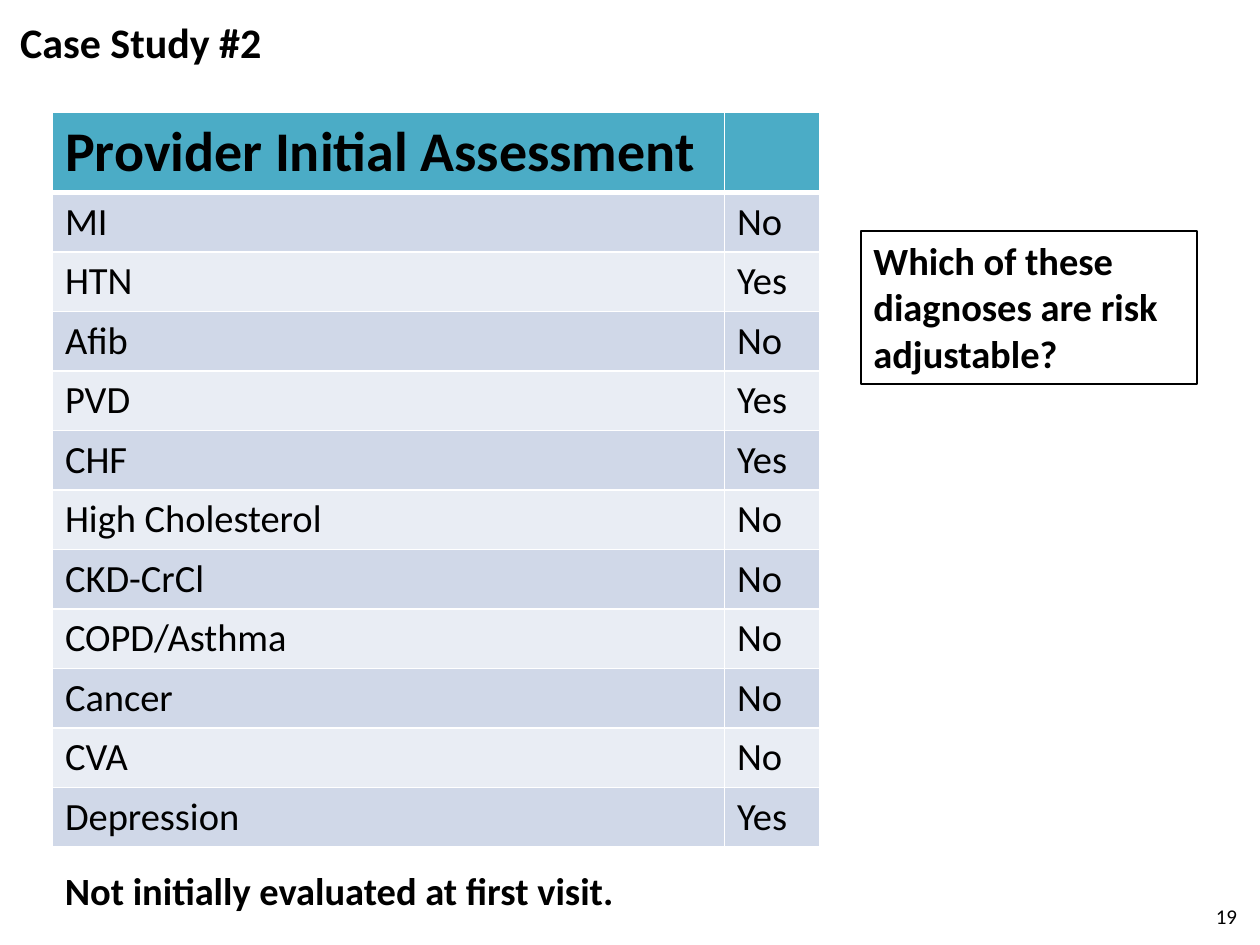
from lxml.etree import SubElement
from pptx import Presentation
from pptx.dml.color import RGBColor
from pptx.enum.shapes import MSO_SHAPE
from pptx.enum.text import MSO_ANCHOR, PP_ALIGN
from pptx.oxml.ns import qn
from pptx.util import Pt

FONT = "Calibri"
BLACK, WHITE, TEAL = "000000", "FFFFFF", "4BACC6"
BANDS = ["D0D8E8", "E9EDF4"]

TITLE = "Case Study #2"
HEADER = ("Provider Initial Assessment", "")
DIAGNOSES = [
    ("MI", "No"),
    ("HTN", "Yes"),
    ("Afib", "No"),
    ("PVD", "Yes"),
    ("CHF", "Yes"),
    ("High Cholesterol", "No"),
    ("CKD-CrCl", "No"),
    ("COPD/Asthma", "No"),
    ("Cancer", "No"),
    ("CVA", "No"),
    ("Depression", "Yes"),
]
NOTE = "Not initially evaluated at first visit."
QUESTION = "Which of these diagnoses are risk adjustable?"
PAGE = "19"

TABLE_LEFT, TABLE_TOP = 30, 64
COLUMNS = [384, 54.3]
HEADER_HEIGHT, ROW_HEIGHT = 46, 34


def rgb(value):
    return RGBColor.from_string(value)


def style(p, size, bold, align=PP_ALIGN.LEFT):
    p.alignment = align
    p.font.name = FONT
    p.font.size = Pt(size)
    p.font.bold = bold
    p.font.color.rgb = rgb(BLACK)


def write(sp, text, size, bold=True, anchor=MSO_ANCHOR.TOP, align=PP_ALIGN.LEFT):
    tf = sp.text_frame
    tf.word_wrap = True
    tf.vertical_anchor = anchor
    tf.text = text
    style(tf.paragraphs[0], size, bold, align)
    return tf


def add_border(cell, side, width):
    tcPr = cell._tc.get_or_add_tcPr()
    ln = SubElement(tcPr, qn(f"a:ln{side}"), w=str(Pt(width)))
    fill = SubElement(ln, qn("a:solidFill"))
    SubElement(fill, qn("a:srgbClr"), val=WHITE)


def add_assessment(s):
    rows = [HEADER] + DIAGNOSES
    heights = [HEADER_HEIGHT] + [ROW_HEIGHT] * len(DIAGNOSES)
    frame = s.shapes.add_table(
        len(rows), len(COLUMNS), Pt(TABLE_LEFT), Pt(TABLE_TOP),
        Pt(sum(COLUMNS)), Pt(sum(heights)))
    table = frame.table
    for column, width in zip(table.columns, COLUMNS):
        column.width = Pt(width)
    for i, (values, height) in enumerate(zip(rows, heights)):
        table.rows[i].height = Pt(height)
        for j, value in enumerate(values):
            cell = table.cell(i, j)
            cell.text = value
            style(cell.text_frame.paragraphs[0], 22 if i else 32, i == 0)
            widths = {"L": 1, "R": 1, "T": 3 if i == 1 else 1, "B": 1 if i else 3}
            for side, width in widths.items():
                add_border(cell, side, width)
            cell.fill.solid()
            cell.fill.fore_color.rgb = rgb(BANDS[(i - 1) % 2] if i else TEAL)


def main():
    prs = Presentation()
    prs.slide_width, prs.slide_height = Pt(720), Pt(540)
    s = prs.slides.add_slide(prs.slide_layouts[6])

    title = s.shapes.add_textbox(Pt(11.5), Pt(0), Pt(683), Pt(48))
    tf = write(title, TITLE, 24, anchor=MSO_ANCHOR.MIDDLE)
    tf.margin_left = tf.margin_right = 0

    page = s.shapes.add_textbox(Pt(666), Pt(498), Pt(48), Pt(36))
    write(page, PAGE, 12, False, MSO_ANCHOR.BOTTOM, PP_ALIGN.RIGHT)

    add_assessment(s)

    note = s.shapes.add_textbox(Pt(TABLE_LEFT), Pt(492), Pt(372), Pt(34))
    write(note, NOTE, 22)

    question = s.shapes.add_shape(
        MSO_SHAPE.RECTANGLE, Pt(492), Pt(132), Pt(192), Pt(87.5))
    question.shadow.inherit = False
    question.fill.background()
    question.line.color.rgb = rgb(BLACK)
    question.line.width = Pt(0.75)
    write(question, QUESTION, 22)

    prs.save("out.pptx")


if __name__ == "__main__":
    main()
